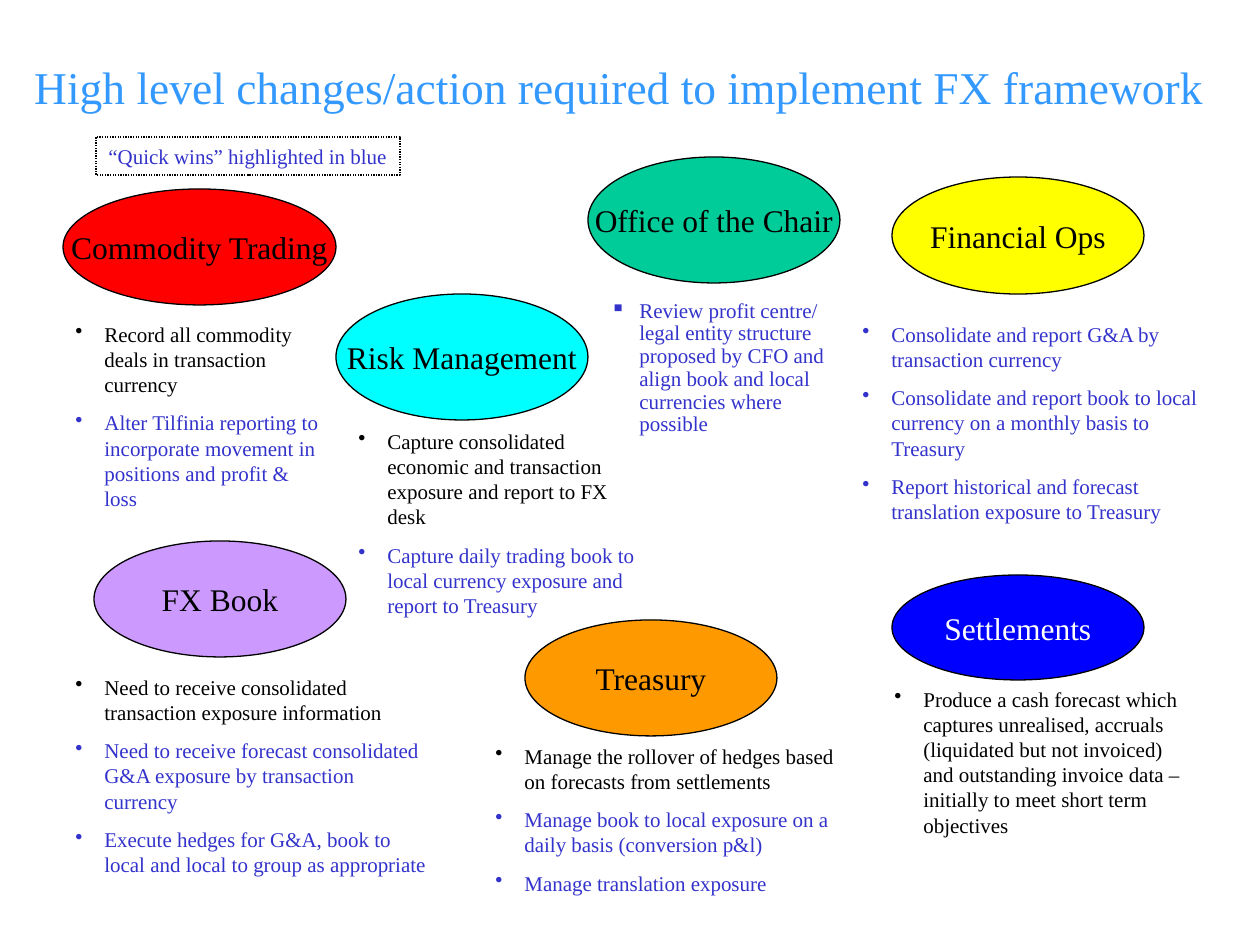
from lxml import etree
from pptx import Presentation
from pptx import util as u
from pptx.dml.color import RGBColor
from pptx.enum import dml, shapes, text
from pptx.oxml import ns

SCALE = 914400 / 126
FONT = "Times New Roman"
BLACK = RGBColor(0x00, 0x00, 0x00)
WHITE = RGBColor(0xFF, 0xFF, 0xFF)
TITLE_BLUE = RGBColor(0x33, 0x99, 0xFF)
QUICK_WIN = RGBColor(0x33, 0x33, 0xCC)
GREEN = RGBColor(0x00, 0xCC, 0x99)
YELLOW = RGBColor(0xFF, 0xFF, 0x00)
RED = RGBColor(0xFF, 0x00, 0x00)
BLUE = RGBColor(0x00, 0x00, 0xFF)
PURPLE = RGBColor(0xCC, 0x99, 0xFF)
CYAN = RGBColor(0x00, 0xFF, 0xFF)
ORANGE = RGBColor(0xFF, 0x99, 0x00)
INDENT = 29

TEAMS = [
    ("Office of the Chair", (588, 157, 252, 126), GREEN, BLACK),
    ("Financial Ops", (892, 177, 252, 117), YELLOW, BLACK),
    ("Commodity Trading", (63, 189, 273, 116), RED, BLACK),
    ("Settlements", (892, 575, 252, 105), BLUE, WHITE),
    ("FX Book", (94, 541, 252, 116), PURPLE, BLACK),
    ("Risk Management", (336, 294, 252, 126), CYAN, BLACK),
    ("Treasury", (525, 620, 252, 116), ORANGE, BLACK),
]

ACTIONS = [
    ((850, 315, 368, 190), [
        ("Consolidate and report G&A by transaction currency", QUICK_WIN),
        ("Consolidate and report book to local currency on a monthly basis to Treasury", QUICK_WIN),
        ("Report historical and forecast translation exposure to Treasury", QUICK_WIN),
    ]),
    ((63, 315, 273, 152), [
        ("Record all commodity deals in transaction currency", BLACK),
        ("Alter Tilfinia reporting to incorporate movement in positions and profit & loss", QUICK_WIN),
    ]),
    ((63, 668, 378, 190), [
        ("Need to receive consolidated transaction exposure information", BLACK),
        ("Need to receive forecast consolidated G&A exposure by transaction currency", QUICK_WIN),
        ("Execute hedges for G&A, book to local and local to group as appropriate", QUICK_WIN),
    ]),
    ((483, 737, 378, 165), [
        ("Manage the rollover of hedges based on forecasts from settlements", BLACK),
        ("Manage book to local exposure on a daily basis (conversion p&l)", QUICK_WIN),
        ("Manage translation exposure", QUICK_WIN),
    ]),
    ((882, 680, 325, 178), [
        ("Produce a cash forecast which captures unrealised, accruals (liquidated but not "
         "invoiced) and outstanding invoice data – initially to meet short term objectives", BLACK),
    ]),
    ((346, 422, 305, 178), [
        ("Capture consolidated economic and transaction exposure and report to FX desk", BLACK),
        ("Capture daily trading book to local currency exposure and report to Treasury", QUICK_WIN),
    ]),
]

CHAIR_ACTIONS = [
    ("Review profit centre/ legal entity structure proposed by CFO and align book "
     "and local currencies where possible", QUICK_WIN),
]


def px(length):
    return u.Emu(round(length * SCALE))


def write(para, words, size, color, align=text.PP_ALIGN.LEFT):
    para.text = words
    para.alignment = align
    para.font.name = FONT
    para.font.size = u.Pt(size)
    para.font.color.rgb = color


def add_bullet(para, color, mark):
    props = para._p.get_or_add_pPr()
    props.set("marL", str(px(INDENT)))
    props.set("indent", str(-px(INDENT)))
    bullet_color = etree.SubElement(props, ns.qn("a:buClr"))
    etree.SubElement(bullet_color, ns.qn("a:srgbClr"), val=str(color))
    etree.SubElement(props, ns.qn("a:buChar"), char=mark)


def add_text_box(page, place):
    box = page.shapes.add_textbox(*map(px, place))
    box.text_frame.word_wrap = True
    return box.text_frame


def add_title(page, words):
    frame = add_text_box(page, (-42, 53, 1323, 68))
    write(frame.paragraphs[0], words, 26, TITLE_BLUE, text.PP_ALIGN.CENTER)


def add_outlined(page, kind, place):
    shape = page.shapes.add_shape(kind, *map(px, place))
    shape.shadow.inherit = False
    shape.line.color.rgb = BLACK
    shape.line.width = u.Pt(0.75)
    shape.text_frame.word_wrap = False
    return shape


def add_team(page, name, place, fill, color):
    oval = add_outlined(page, shapes.MSO_SHAPE.OVAL, place)
    oval.fill.solid()
    oval.fill.fore_color.rgb = fill
    oval.text_frame.vertical_anchor = text.MSO_ANCHOR.MIDDLE
    write(oval.text_frame.paragraphs[0], name, 18, color, text.PP_ALIGN.CENTER)


def add_legend(page, words):
    legend = add_outlined(page, shapes.MSO_SHAPE.RECTANGLE, (96, 137, 304, 38))
    legend.fill.background()
    legend.line.dash_style = dml.MSO_LINE.ROUND_DOT
    legend.text_frame.vertical_anchor = text.MSO_ANCHOR.TOP
    write(legend.text_frame.paragraphs[0], words, 12, QUICK_WIN)


def add_actions(page, place, actions, mark="•", before=7.5, spacing=None):
    frame = add_text_box(page, place)
    for index, (words, color) in enumerate(actions):
        para = frame.add_paragraph() if index else frame.paragraphs[0]
        write(para, words, 12, color)
        para.space_before = u.Pt(before)
        para.line_spacing = spacing
        add_bullet(para, color, mark)


def main():
    deck = Presentation()
    deck.slide_width, deck.slide_height = px(1260), px(945)
    page = deck.slides.add_slide(deck.slide_layouts[6])
    add_title(page, "High level changes/action required to implement FX framework")
    for team in TEAMS:
        add_team(page, *team)
    for place, actions in ACTIONS:
        add_actions(page, place, actions)
    add_actions(page, (598, 294, 252, 126), CHAIR_ACTIONS, mark="▪", before=3, spacing=0.9)
    add_legend(page, "“Quick wins” highlighted in blue")
    deck.save("out.pptx")


if __name__ == "__main__":
    main()
